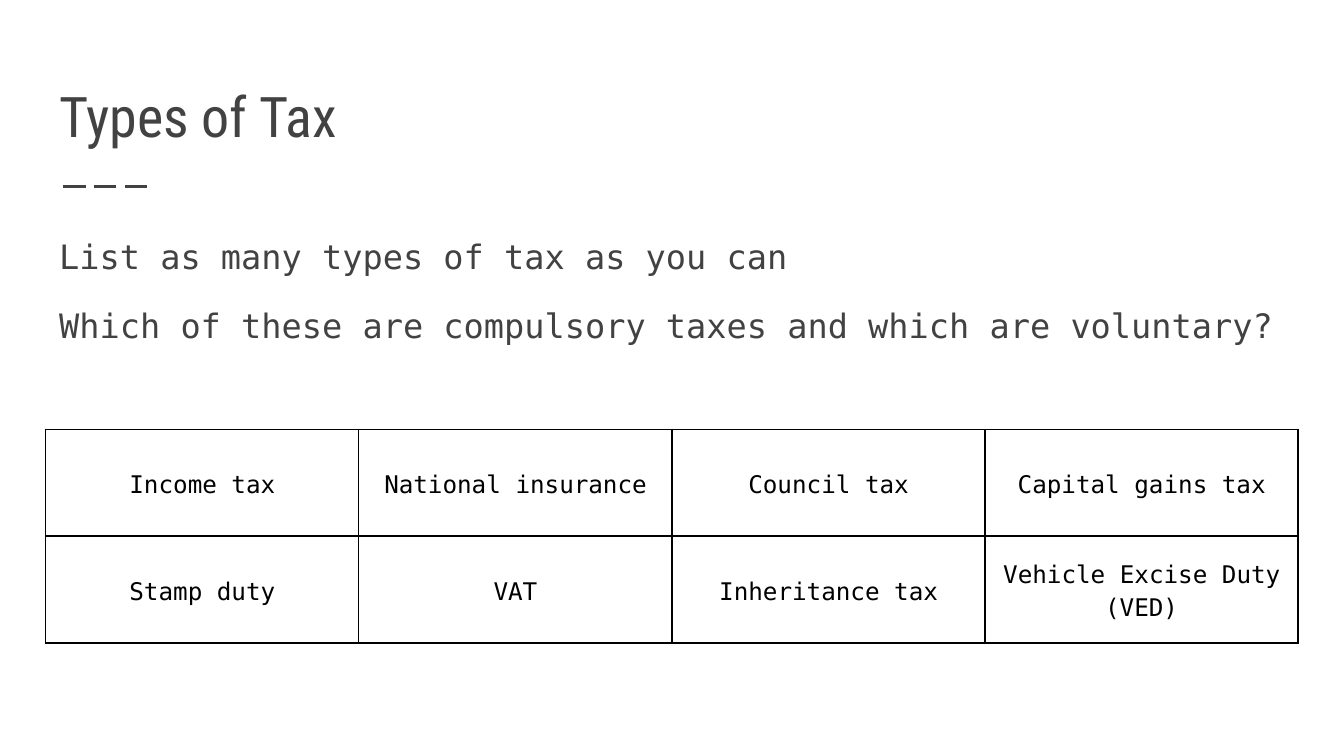
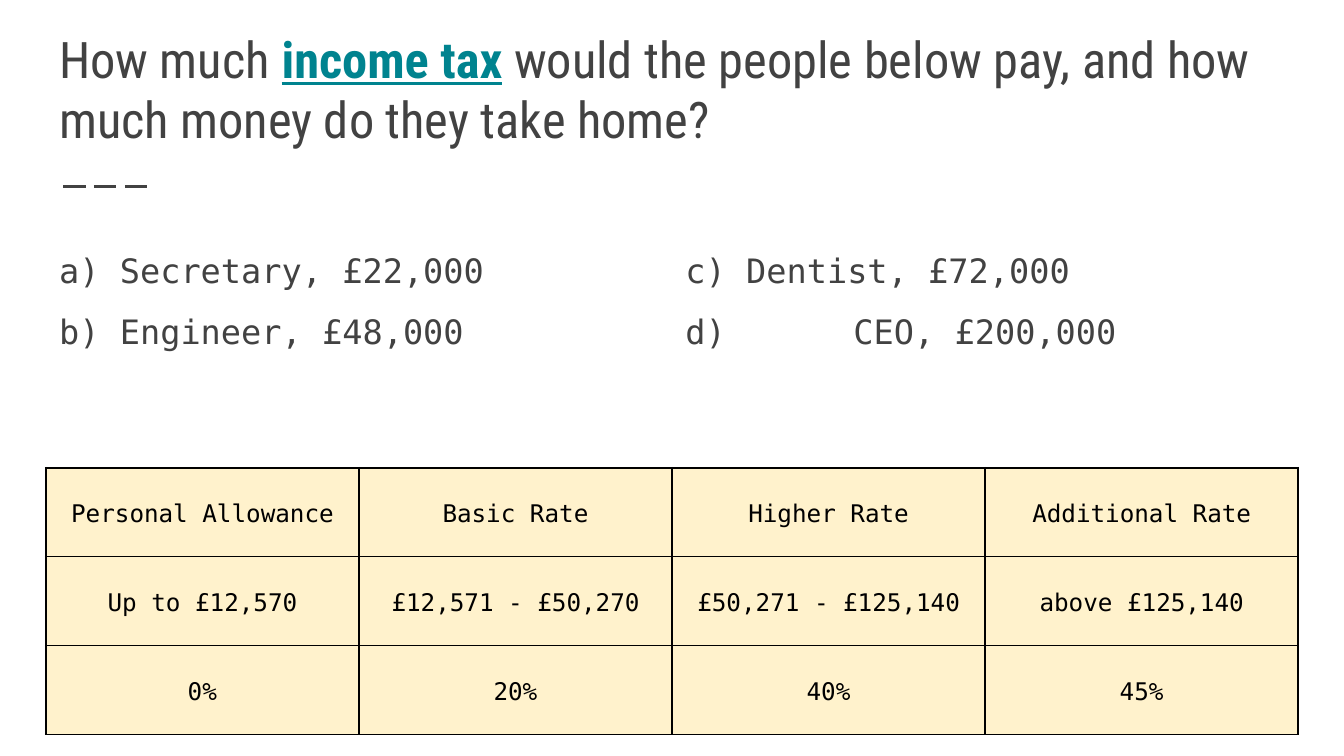
from dataclasses import dataclass

from lxml import etree
from pptx import Presentation
from pptx.dml.color import RGBColor
from pptx.enum import dml, shapes, text
from pptx.oxml import ns
from pptx.util import Pt


@dataclass(frozen=True)
class Theme:
    ink: str = "424242"
    accent: str = "00838F"
    table_ink: str = "000000"
    table_fill: str = "FFF2CC"
    title_font: str = "Roboto Condensed"
    body_font: str = "DejaVu Sans Mono"
    title_size: float = 30
    long_title_size: float = 27
    body_size: float = 18
    table_size: float = 13


THEME = Theme()
LEFT, WIDTH = 24.5, 671
BODY_TOP = 116
INSET = 7.2
LAYOUT_ONE_BODY, LAYOUT_TWO_BODIES = 1, 3


def write(para, content, font, size, color=THEME.ink, align=text.PP_ALIGN.LEFT,
          spacing=1.0, before=0, after=0):
    """Fill a paragraph; content is a string or (text, is_key_term) pairs."""
    para.alignment = align
    para.line_spacing = spacing
    para.space_before, para.space_after = Pt(before), Pt(after)
    spans = [(content, False)] if isinstance(content, str) else content
    for words, is_key_term in spans:
        span = para.add_run()
        span.text = words
        span.font.name, span.font.size = font, Pt(size)
        span.font.bold = span.font.underline = is_key_term
        span.font.color.rgb = RGBColor.from_string(THEME.accent if is_key_term else color)


def place(box, left, top, width, height, anchor):
    """Move a placeholder and return its text frame, ready to fill."""
    box.left, box.top, box.width, box.height = map(Pt, (left, top, width, height))
    frame = box.text_frame
    frame.word_wrap = True
    frame.auto_size = text.MSO_AUTO_SIZE.NONE
    frame.vertical_anchor = anchor
    frame.margin_left = frame.margin_right = Pt(INSET)
    frame.margin_top = frame.margin_bottom = Pt(INSET)
    return frame


def add_page(deck, layout, title, title_size=THEME.title_size):
    page = deck.slides.add_slide(deck.slide_layouts[layout])
    add_title_rule(page)
    frame = place(page.shapes.title, LEFT, 29.5, WIDTH, 57.6, text.MSO_ANCHOR.BOTTOM)
    write(frame.paragraphs[0], title, THEME.title_font, title_size)
    return page


def add_title_rule(page):
    rule = page.shapes.add_connector(
        shapes.MSO_CONNECTOR.STRAIGHT, Pt(33.8), Pt(100), Pt(82), Pt(100))
    rule.line.color.rgb = RGBColor.from_string(THEME.ink)
    rule.line.width = Pt(1.5)
    rule.line.dash_style = dml.MSO_LINE.LONG_DASH
    etree.SubElement(rule._element.spPr, ns.qn("a:effectLst"))


def fill_body(box, lines, left, width, height, spacing, gap=0, hang=0):
    """Write unbulleted lines; gap surrounds each line after the first."""
    frame = place(box, left, BODY_TOP, width, height, text.MSO_ANCHOR.TOP)
    for index, line in enumerate(lines):
        para = frame.add_paragraph() if index else frame.paragraphs[0]
        space = gap if index else 0
        write(para, line, THEME.body_font, THEME.body_size,
              spacing=spacing, before=space, after=space)
        props = para._p.get_or_add_pPr()
        props.set("marL", str(Pt(hang)))
        props.set("indent", str(-Pt(hang)))
        props.set("defTabSz", str(Pt(72)))
        etree.SubElement(props, ns.qn("a:buNone"))


def set_borders(cell, width):
    props = cell._tc.get_or_add_tcPr()
    for index, side in enumerate(("lnL", "lnR", "lnT", "lnB")):
        line = etree.Element(ns.qn(f"a:{side}"), w=str(Pt(width)))
        fill = etree.SubElement(line, ns.qn("a:solidFill"))
        etree.SubElement(fill, ns.qn("a:srgbClr"), val=THEME.table_ink)
        props.insert(index, line)


def add_grid(page, rows, top, row_height, border, fill=None):
    columns = len(rows[0])
    table = page.shapes.add_table(len(rows), columns, Pt(LEFT), Pt(top), Pt(WIDTH),
                                  Pt(row_height * len(rows))).table
    table.first_row = table.horz_banding = False
    for column in table.columns:
        column.width = Pt(WIDTH / columns)
    for row, entries in zip(table.rows, rows):
        row.height = Pt(row_height)
        for cell, entry in zip(row.cells, entries):
            cell.vertical_anchor = text.MSO_ANCHOR.MIDDLE
            cell.margin_left = cell.margin_right = Pt(5.4)
            cell.margin_top = cell.margin_bottom = Pt(INSET)
            if fill:
                cell.fill.solid()
                cell.fill.fore_color.rgb = RGBColor.from_string(fill)
            else:
                cell.fill.background()
            set_borders(cell, border)
            write(cell.text_frame.paragraphs[0], entry, THEME.body_font,
                  THEME.table_size, color=THEME.table_ink,
                  align=text.PP_ALIGN.CENTER, spacing=1.15, before=12)


def add_tax_types(deck):
    page = add_page(deck, LAYOUT_ONE_BODY, "Types of Tax")
    fill_body(page.placeholders[1], [
        "List as many types of tax as you can",
        "Which of these are compulsory taxes and which are voluntary?",
    ], LEFT, WIDTH, 244, spacing=1.15, gap=12)
    add_grid(page, [
        ["Income tax", "National insurance", "Council tax", "Capital gains tax"],
        ["Stamp duty", "VAT", "Inheritance tax", "Vehicle Excise Duty (VED)"],
    ], top=229.9, row_height=57.3, border=0.75)


def add_income_tax(deck):
    page = add_page(deck, LAYOUT_TWO_BODIES, [
        ("How much ", False),
        ("income tax", True),
        (" would the people below pay, and how much money do they take home?", False),
    ], THEME.long_title_size)
    people = [
        ["a) Secretary, £22,000", "b) Engineer, £48,000"],
        ["c) Dentist, £72,000", "d)\tCEO, £200,000"],
    ]
    half = WIDTH / 2
    for index, lines in enumerate(people):
        fill_body(page.placeholders[index + 1], lines, LEFT + index * half, half, 87,
                  spacing=1.5, hang=18)
    add_grid(page, [
        ["Personal Allowance", "Basic Rate", "Higher Rate", "Additional Rate"],
        ["Up to £12,570", "£12,571 - £50,270", "£50,271 - £125,140", "above £125,140"],
        ["0%", "20%", "40%", "45%"],
    ], top=250.6, row_height=47.6, border=1, fill=THEME.table_fill)


def main():
    deck = Presentation()
    deck.slide_width, deck.slide_height = Pt(720), Pt(405)
    add_tax_types(deck)
    add_income_tax(deck)
    deck.save("out.pptx")


if __name__ == "__main__":
    main()
